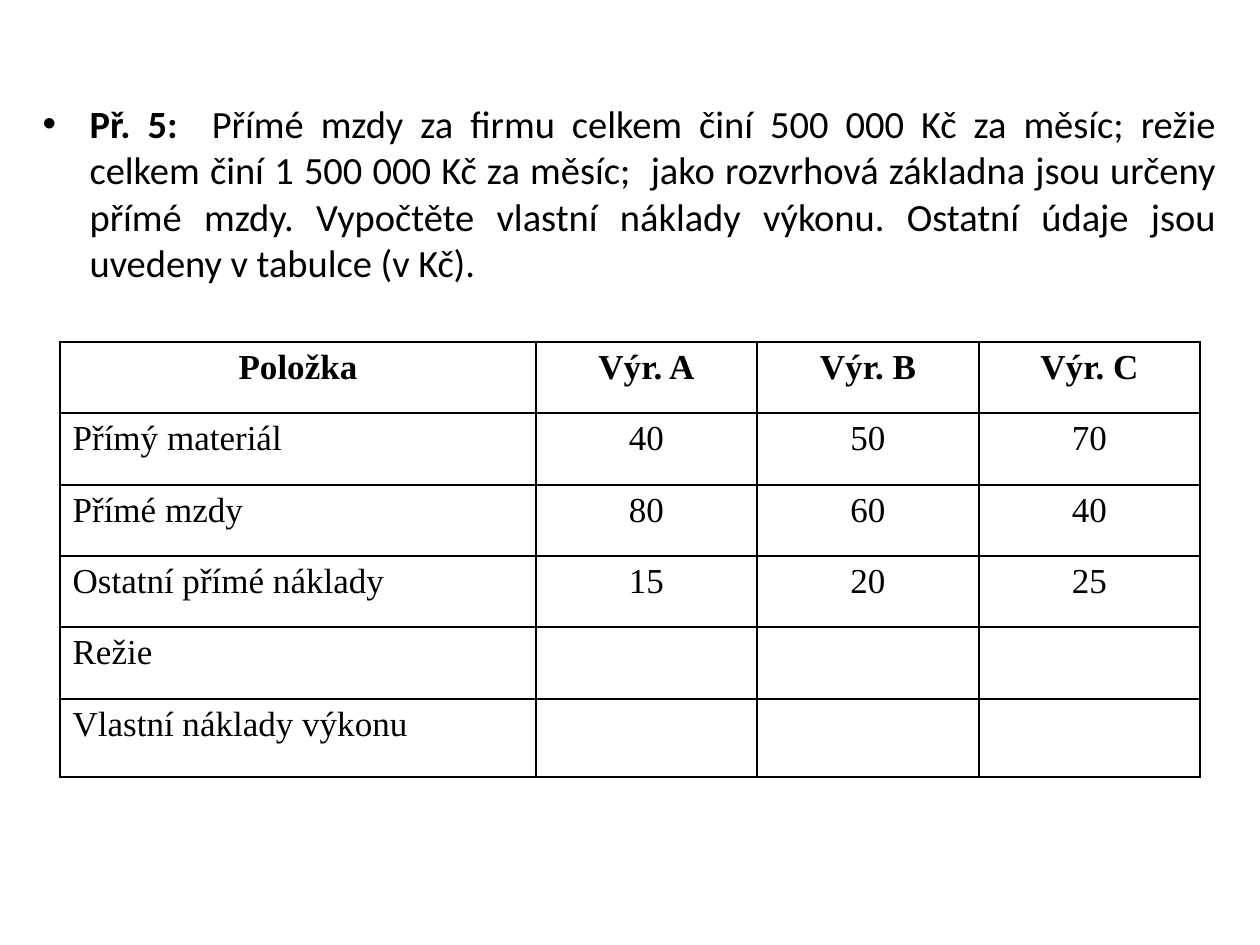
from dataclasses import dataclass

import pptx
import pptx.dml.color
import pptx.enum.text
import pptx.oxml
import pptx.oxml.ns
import pptx.util

PX = 914400 / 126
ALIGN = pptx.enum.text.PP_ALIGN


def px(length: int) -> pptx.util.Emu:
    return pptx.util.Emu(round(length * PX))


@dataclass(frozen=True)
class Theme:
    ink: str = "000000"
    body_font: str = "Calibri"
    table_font: str = "Times New Roman"
    body_size: int = 22
    table_size: int = 20
    border_width: int = 1


@dataclass(frozen=True)
class CostItem:
    label: str
    values: tuple[str, str, str] = ("", "", "")


THEME = Theme()
TASK_LABEL = "Př. 5: "
TASK_TEXT = (
    " Přímé mzdy za firmu celkem činí 500 000 Kč za měsíc; režie celkem činí "
    "1 500 000 Kč za měsíc;  jako rozvrhová základna jsou určeny přímé mzdy. "
    "Vypočtěte vlastní náklady výkonu. Ostatní údaje jsou uvedeny v tabulce (v Kč)."
)
COST_ITEMS = [
    CostItem("Položka", ("Výr. A", "Výr. B", "Výr. C")),
    CostItem("Přímý materiál", ("40", "50", "70")),
    CostItem("Přímé mzdy", ("80", "60", "40")),
    CostItem("Ostatní přímé náklady", ("15", "20", "25")),
    CostItem("Režie"),
    CostItem("Vlastní náklady výkonu"),
]
COLUMN_WIDTHS = [476, 221, 222, 221]
ROW_HEIGHTS = [71, 72, 71, 71, 72, 78]


def style_font(font, name: str, size: int) -> None:
    font.name = name
    font.size = pptx.util.Pt(size)
    font.color.rgb = pptx.dml.color.RGBColor.from_string(THEME.ink)


def add_borders(cell) -> None:
    properties = cell._tc.get_or_add_tcPr()
    width = pptx.util.Pt(THEME.border_width)
    for position, side in enumerate(("lnL", "lnR", "lnT", "lnB")):
        properties.insert(position, pptx.oxml.parse_xml(
            f'<a:{side} {pptx.oxml.ns.nsdecls("a")} w="{width}"><a:solidFill>'
            f'<a:srgbClr val="{THEME.ink}"/></a:solidFill></a:{side}>'))


def fill_task(body) -> None:
    body.left, body.top, body.width, body.height = map(px, (30, 94, 1199, 248))
    frame = body.text_frame
    frame.word_wrap = True
    frame.auto_size = pptx.enum.text.MSO_AUTO_SIZE.NONE
    paragraph = frame.paragraphs[0]
    properties = paragraph._p.get_or_add_pPr()
    properties.set("marL", str(px(47)))
    properties.set("indent", str(-px(47)))
    properties.append(pptx.oxml.parse_xml(
        f'<a:buChar {pptx.oxml.ns.nsdecls("a")} char="•"/>'))
    paragraph.alignment = ALIGN.JUSTIFY
    paragraph.space_before = pptx.util.Pt(0)
    for text, bold in ((TASK_LABEL, True), (TASK_TEXT, False)):
        run = paragraph.add_run()
        run.text = text
        run.font.bold = bold
        style_font(run.font, THEME.body_font, THEME.body_size)


def add_cost_table(slide, items: list[CostItem]) -> None:
    frame = slide.shapes.add_table(
        len(items), len(COLUMN_WIDTHS), px(60), px(342),
        px(sum(COLUMN_WIDTHS)), px(sum(ROW_HEIGHTS)))
    table = frame.table
    table.first_row = table.horz_banding = False
    for column, width in zip(table.columns, COLUMN_WIDTHS):
        column.width = px(width)
    for row, height in zip(table.rows, ROW_HEIGHTS):
        row.height = px(height)
    for row_index, item in enumerate(items):
        for column_index, text in enumerate((item.label, *item.values)):
            cell = table.cell(row_index, column_index)
            cell.fill.background()
            add_borders(cell)
            cell.text = text
            paragraph = cell.text_frame.paragraphs[0]
            is_label = row_index > 0 and column_index == 0
            paragraph.alignment = ALIGN.JUSTIFY if is_label else ALIGN.CENTER
            style_font(paragraph.font, THEME.table_font, THEME.table_size)
            paragraph.font.bold = row_index == 0


def main() -> None:
    presentation = pptx.Presentation()
    presentation.slide_width, presentation.slide_height = px(1260), px(945)
    slide = presentation.slides.add_slide(presentation.slide_layouts[1])

    # The slide has no title
    title = slide.shapes.title.element
    title.getparent().remove(title)

    # Task statement
    fill_task(slide.placeholders[1])

    # Cost table with blanks to work out
    add_cost_table(slide, COST_ITEMS)

    presentation.save("out.pptx")


if __name__ == "__main__":
    main()
